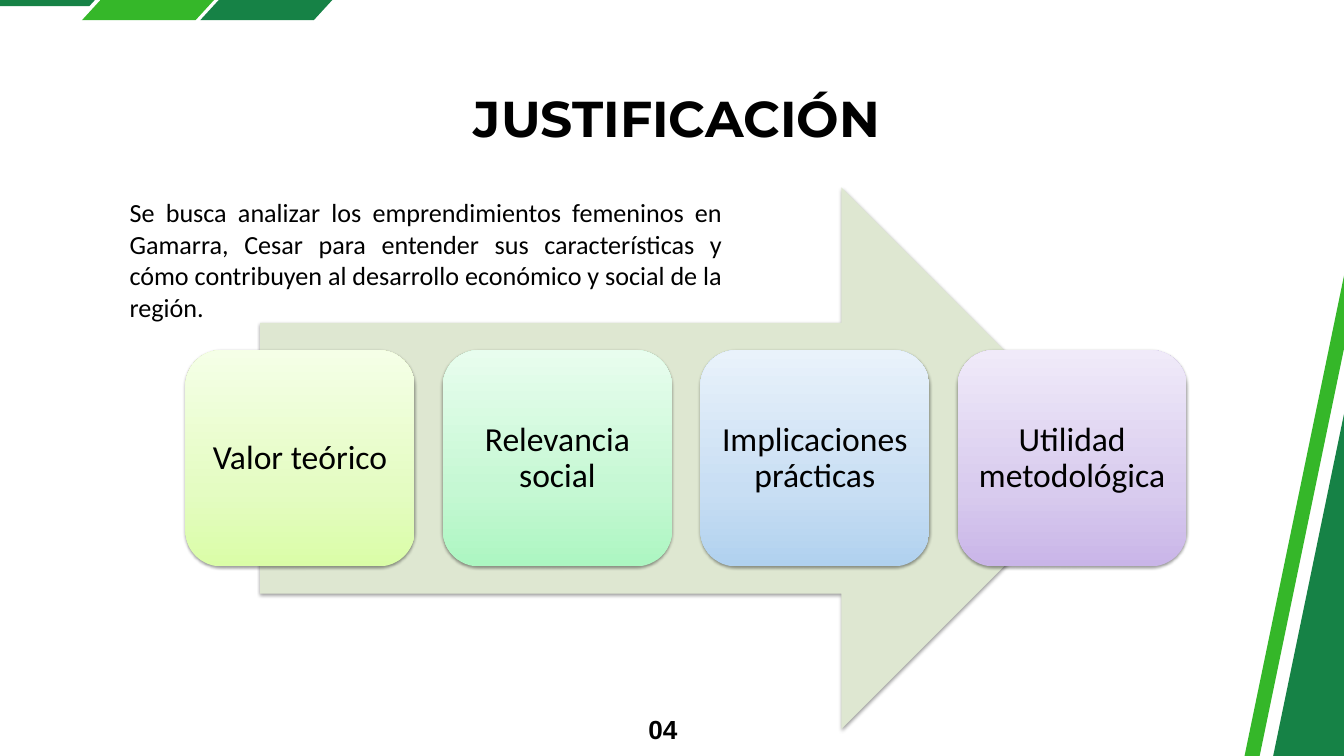
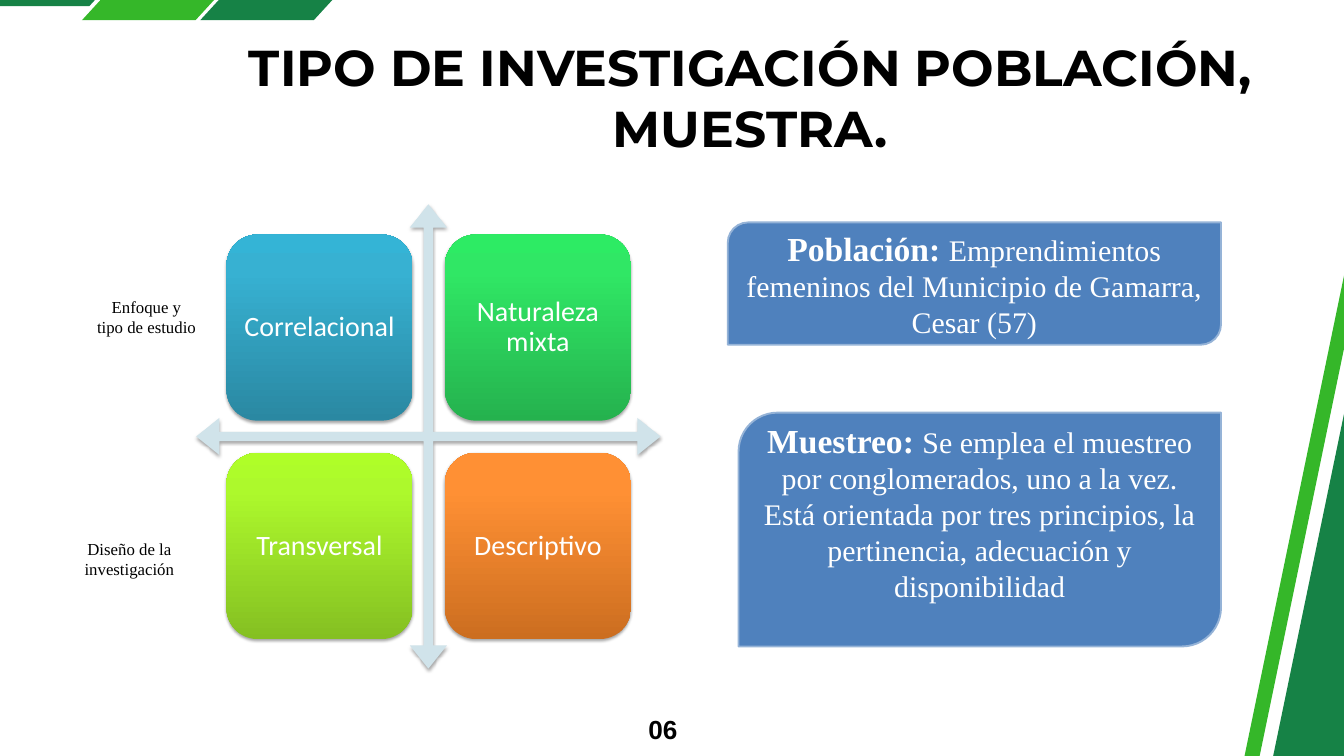
from copy import deepcopy
from dataclasses import dataclass

from lxml.etree import SubElement
from pptx import Presentation
from pptx.dml.color import RGBColor
from pptx.enum.shapes import MSO_SHAPE as Preset
from pptx.enum.text import MSO_ANCHOR as Anchor, MSO_AUTO_SIZE as AutoSize, PP_ALIGN as Align
from pptx.oxml.ns import qn
from pptx.shapes.autoshape import Shape
from pptx.slide import Slide
from pptx.util import Inches, Pt

# Shared colours and fonts
BLACK = RGBColor(0x00, 0x00, 0x00)
WHITE = RGBColor(0xFF, 0xFF, 0xFF)
DARK_GREEN = RGBColor(0x16, 0x82, 0x46)
LIGHT_GREEN = RGBColor(0x35, 0xB7, 0x29)
SAGE = RGBColor(0xDE, 0xE7, 0xD1)
PALE_BLUE = RGBColor(0xD0, 0xE3, 0xEA)
CARD_BLUE = RGBColor(0x4F, 0x81, 0xBD)
CARD_EDGE = RGBColor(0x95, 0xB3, 0xD7)
TITLE_FONT, NUMBER_FONT, BODY_FONT, SERIF_FONT = "Montserrat", "Arial", "Calibri", "Times New Roman"


@dataclass(frozen=True)
class Area:
    left: float
    top: float
    width: float
    height: float

    def lengths(self) -> tuple:
        return tuple(Inches(n) for n in (self.left, self.top, self.width, self.height))


@dataclass(frozen=True)
class Style:
    font: str
    size: float
    color: RGBColor = BLACK
    bold: bool = False
    align: Align = Align.CENTER


@dataclass(frozen=True)
class Band:
    """A parallelogram leaning right by slant, then turned by rotation."""
    color: RGBColor
    area: Area
    slant: float = 0
    rotation: float = 0

    def corners(self) -> list:
        left, top = self.area.left, self.area.top
        right, bottom = left + self.area.width, top + self.area.height
        points = ((left + self.slant, top), (right, top), (right - self.slant, bottom), (left, bottom))
        return [(Inches(x), Inches(y)) for x, y in points]


@dataclass(frozen=True)
class Shadow:
    opacity: int
    distance: float


@dataclass(frozen=True)
class Tile:
    text: str
    colors: tuple


@dataclass(frozen=True)
class TileLook:
    width: float
    height: float
    stops: tuple
    inset: float
    style: Style
    shadow: Shadow


@dataclass(frozen=True)
class Card:
    area: Area
    term: str
    text: str
    bottom: float


TITLE = Style(TITLE_FONT, 54, bold=True)
NUMBER = Style(NUMBER_FONT, 28, bold=True, align=Align.RIGHT)
INTRO = Style(BODY_FONT, 28, align=Align.JUSTIFY)
LABEL = Style(SERIF_FONT, 18)
CARD_TERM = Style(SERIF_FONT, 36, WHITE, True)
CARD_TEXT = Style(SERIF_FONT, 32, WHITE)

BANDS = (
    Band(DARK_GREEN, Area(-2.63, -0.83, 4.8, 0.92), slant=0.84),
    Band(LIGHT_GREEN, Area(1.22, -1.03, 2.91, 1.33), slant=1.22),
    Band(DARK_GREEN, Area(2.98, -1.03, 2.91, 1.33), slant=1.22),
    Band(DARK_GREEN, Area(13.86, 5.35, 16.41, 4.66), rotation=281.7),
    Band(LIGHT_GREEN, Area(11.26, 7.12, 16.41, 0.22), rotation=281.7),
)

# Justification: four pastel tiles on an arrow
SOFT_SHADOW = Shadow(38, 1.6)
REASON_LOOK = TileLook(3.41, 3.22, (0, 0.35, 1), 0.14, Style(BODY_FONT, 36), SOFT_SHADOW)
REASONS = (
    Tile("Valor teórico", ("DAFDA7", "E4FCC2", "F5FFE7")),
    Tile("Relevancia social", ("ACF6C1", "C5F8D3", "E8FDEE")),
    Tile("Implicaciones prácticas", ("B0D1EF", "C8DEF3", "E9F2FB")),
    Tile("Utilidad metodológica", ("C9B5E8", "D8CBEE", "F0EAF9")),
)

# Research type: four bright tiles around crossed axes
AXIS_SHADOW = Shadow(35, 1.8)
TYPE_LOOK = TileLook(2.77, 2.77, (0, 0.8, 1), 0.11, Style(BODY_FONT, 30, WHITE), AXIS_SHADOW)
TYPES = (
    Tile("Correlacional", ("2A88A2", "37B1D2", "34B4D6")),
    Tile("Naturaleza mixta", ("25B24E", "30E765", "2DEB64")),
    Tile("Transversal", ("85C022", "ADF92C", "AFFE28")),
    Tile("Descriptivo", ("CC6E20", "FF9034", "FF9136")),
)
CARDS = (
    Card(Area(10.83, 3.31, 7.34, 1.82), "Población: ",
         "Emprendimientos femeninos del Municipio de Gamarra, Cesar (57)", 0.05),
    Card(Area(10.99, 6.14, 7.18, 3.48), "Muestreo: ",
         "Se emplea el muestreo por conglomerados, uno a la vez. Está orientada por "
         "tres principios, la pertinencia, adecuación y disponibilidad", 0.59),
)


def format_span(span, style: Style) -> None:
    span.font.name = style.font
    span.font.size = Pt(style.size)
    span.font.bold = style.bold
    span.font.color.rgb = style.color


def write(box: Shape, text: str, style: Style, spacing=None) -> None:
    box.text_frame.word_wrap = True
    box.text_frame.text = text
    for para in box.text_frame.paragraphs:
        para.alignment = style.align
        if spacing is not None:
            para.line_spacing = spacing
        for span in para.runs:
            format_span(span, style)


def set_insets(box: Shape, inset: float) -> None:
    frame = box.text_frame
    frame.margin_left = frame.margin_right = Inches(inset)
    frame.margin_top = frame.margin_bottom = Inches(inset)


def add_text(page: Slide, area: Area, text: str, style: Style, inset=None, spacing=None) -> None:
    box = page.shapes.add_textbox(*area.lengths())
    write(box, text, style, spacing)
    box.text_frame.auto_size = AutoSize.SHAPE_TO_FIT_TEXT
    if inset is not None:
        set_insets(box, inset)


def set_solid(shape: Shape, color: RGBColor) -> None:
    shape.shadow.inherit = False
    shape.fill.solid()
    shape.fill.fore_color.rgb = color
    shape.line.fill.background()


def set_gradient(shape: Shape, positions: tuple, colors: tuple) -> None:
    """Fill upwards with three colour stops."""
    shape.fill.gradient()
    stop_list = shape._element.spPr.find(".//" + qn("a:gsLst"))
    stop_list.append(deepcopy(stop_list[0]))
    for stop, position, color in zip(shape.fill.gradient_stops, positions, colors):
        stop.position = position
        stop.color.rgb = RGBColor.from_string(color)
    shape.fill.gradient_angle = 90


def cast_shadow(shape: Shape, shadow: Shadow) -> None:
    shape.shadow.inherit = False
    effects = shape._element.spPr.find(qn("a:effectLst"))
    outer = SubElement(effects, qn("a:outerShdw"), blurRad=str(Pt(3.1)),
                       dist=str(Pt(shadow.distance)), dir="5400000", rotWithShape="0")
    color = SubElement(outer, qn("a:srgbClr"), val="000000")
    SubElement(color, qn("a:alpha"), val=str(shadow.opacity * 1000))


def add_arrow(page: Slide, preset: Preset, area: Area, color: RGBColor, shadow: Shadow) -> Shape:
    arrow = page.shapes.add_shape(preset, *area.lengths())
    set_solid(arrow, color)
    cast_shadow(arrow, shadow)
    return arrow


def add_tiles(page: Slide, tiles: tuple, look: TileLook, left: float, top: float,
              pitch: float, columns: int) -> None:
    for index, tile in enumerate(tiles):
        row, column = divmod(index, columns)
        area = Area(left + column * pitch, top + row * pitch, look.width, look.height)
        shape = page.shapes.add_shape(Preset.ROUNDED_RECTANGLE, *area.lengths())
        set_gradient(shape, look.stops, tile.colors)
        shape.line.fill.background()
        cast_shadow(shape, look.shadow)
        write(shape, tile.text, look.style, 0.9)
        set_insets(shape, look.inset)
        shape.text_frame.vertical_anchor = Anchor.MIDDLE


def add_card(page: Slide, card: Card) -> None:
    shape = page.shapes.add_shape(Preset.ROUND_2_DIAG_RECTANGLE, *card.area.lengths())
    set_solid(shape, CARD_BLUE)
    shape.line.color.rgb = CARD_EDGE
    shape.line.width = Pt(2)
    write(shape, card.term, CARD_TERM)
    span = shape.text_frame.paragraphs[0].add_run()
    span.text = card.text
    format_span(span, CARD_TEXT)
    shape.text_frame.vertical_anchor = Anchor.MIDDLE
    shape.text_frame.margin_bottom = Inches(card.bottom)


def add_band(page: Slide, band: Band) -> None:
    start, *others = band.corners()
    builder = page.shapes.build_freeform(*start)
    builder.add_line_segments(others, close=True)
    shape = builder.convert_to_shape()
    set_solid(shape, band.color)
    shape.rotation = band.rotation


def add_page(deck, title: str, title_area: Area, number: str) -> Slide:
    """Start a page with its bands, title and number."""
    page = deck.slides.add_slide(deck.slide_layouts[6])
    for band in BANDS:
        add_band(page, band)
    add_text(page, title_area, title, TITLE, inset=0)
    add_text(page, Area(9.52, 10.54, 0.56, 0.5), number, NUMBER, inset=0, spacing=Pt(39.2))
    return page


def build_justification(deck) -> None:
    page = add_page(deck, "JUSTIFICACIÓN", Area(6.31, 1.29, 7.53, 0.91), "04")
    add_text(page, Area(1.83, 2.88, 9.01, 1.99),
             "Se busca analizar los emprendimientos femeninos en Gamarra, Cesar para entender sus "
             "características y cómo contribuyen al desarrollo económico y social de la región.", INTRO)
    add_arrow(page, Preset.RIGHT_ARROW, Area(3.87, 2.79, 12.68, 8.06), SAGE, SOFT_SHADOW)
    add_tiles(page, REASONS, REASON_LOOK, left=2.76, top=5.21, pitch=3.83, columns=4)


def build_research_type(deck) -> None:
    page = add_page(deck, "TIPO DE INVESTIGACIÓN POBLACIÓN, MUESTRA.",
                    Area(3.58, 0.54, 15.17, 1.82), "06")
    axes = add_arrow(page, Preset.QUAD_ARROW, Area(2.92, 3.04, 6.91, 6.91), PALE_BLUE, AXIS_SHADOW)
    for index, ratio in enumerate((0.02, 0.04, 0.05)):
        axes.adjustments[index] = ratio
    add_tiles(page, TYPES, TYPE_LOOK, left=3.37, top=3.49, pitch=3.25, columns=2)
    add_text(page, Area(0.78, 4.36, 2.8, 0.71), "Enfoque y\ntipo de estudio", LABEL)
    add_text(page, Area(0.58, 7.96, 2.69, 0.71), "Diseño de la investigación", LABEL)
    for card in CARDS:
        add_card(page, card)


def main() -> None:
    deck = Presentation()
    deck.slide_width, deck.slide_height = Inches(20), Inches(11.25)
    build_justification(deck)
    build_research_type(deck)
    deck.save("out.pptx")


if __name__ == "__main__":
    main()
